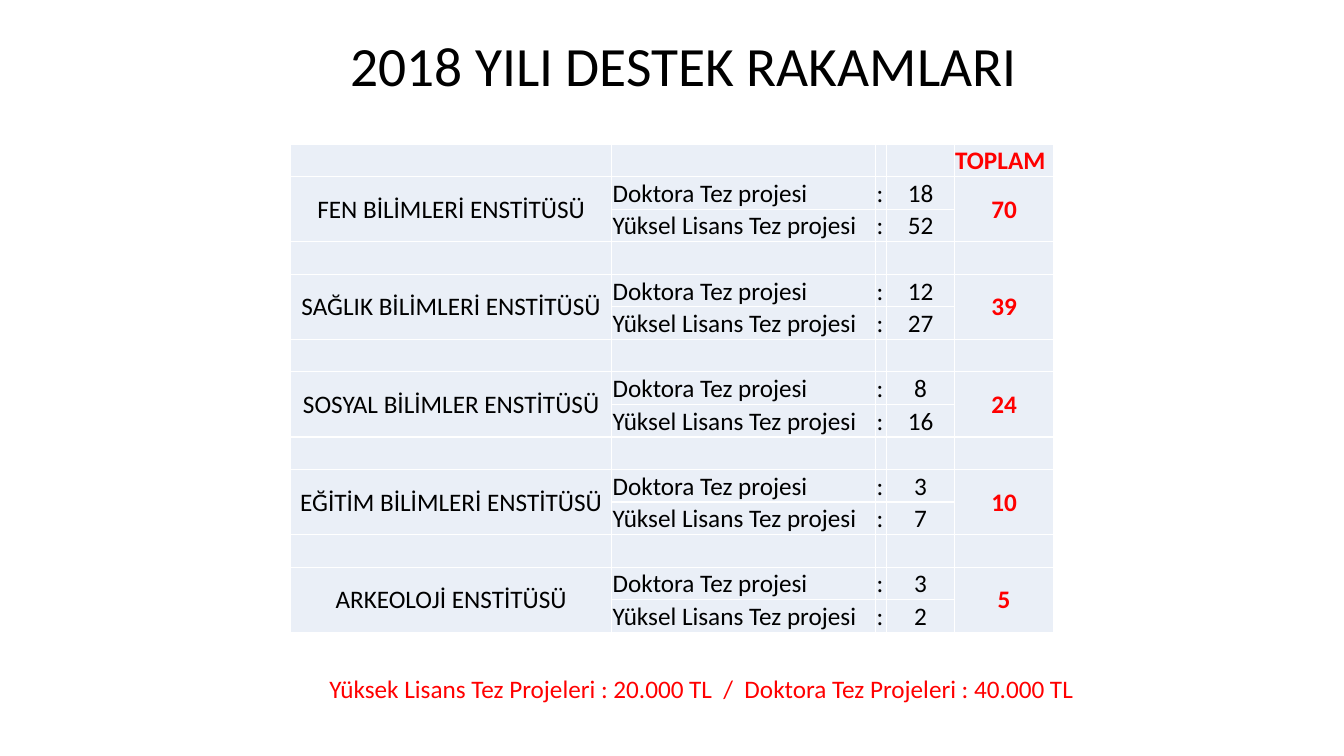
from dataclasses import dataclass

from lxml.etree import SubElement
from pptx import Presentation
from pptx.dml.color import RGBColor
from pptx.enum.text import MSO_ANCHOR as Anchor, PP_ALIGN as Align
from pptx.oxml.ns import qn
from pptx.util import Cm, Pt


@dataclass(frozen=True)
class Theme:
    font: str = "Calibri"
    ink: str = "000000"
    accent: str = "FF0000"
    cell: str = "EAEFF7"
    border: str = "FFFFFF"
    title_size: float = 39.6
    body_size: float = 18
    border_width: float = 1


INSTITUTES = [
    ("FEN BİLİMLERİ ENSTİTÜSÜ", 18, 52),
    ("SAĞLIK BİLİMLERİ ENSTİTÜSÜ", 12, 27),
    ("SOSYAL BİLİMLER ENSTİTÜSÜ", 8, 16),
    ("EĞİTİM BİLİMLERİ ENSTİTÜSÜ", 3, 7),
    ("ARKEOLOJİ ENSTİTÜSÜ", 3, 2),
]
PROJECT_TYPES = ("Doktora Tez projesi", "Yüksel Lisans Tez projesi")
COLUMN_WIDTHS = (8.1, 6.65, 0.28, 1.7, 2.51)
ROW_HEIGHT = 0.82
ROWS_PER_INSTITUTE = 3
CELL_MARGIN = 0.02


class SlideBuilder:
    def __init__(self, slide, theme):
        self.slide = slide
        self.theme = theme

    def fill_text(self, frame, text, size, color, align=Align.LEFT, bold=False):
        frame.text = text
        para = frame.paragraphs[0]
        para.alignment = align
        for span in para.runs:
            span.font.name = self.theme.font
            span.font.size = Pt(size)
            span.font.bold = bold
            span.font.color.rgb = RGBColor.from_string(color)
        return para

    def text(self, text, left, top, width, height, size, color, anchor,
             indent_left=0.25, indent_right=0.25):
        box = self.slide.shapes.add_textbox(Cm(left), Cm(top), Cm(width), Cm(height))
        frame = box.text_frame
        frame.word_wrap = True
        frame.vertical_anchor = anchor
        frame.margin_left, frame.margin_right = Cm(indent_left), Cm(indent_right)
        return self.fill_text(frame, text, size, color, Align.CENTER)

    def table(self, row_count, left, top):
        """Add an empty table with plain filled cells and thin borders."""
        frame = self.slide.shapes.add_table(
            row_count, len(COLUMN_WIDTHS), Cm(left), Cm(top),
            Cm(sum(COLUMN_WIDTHS)), Cm(row_count * ROW_HEIGHT))
        table = frame.table
        table.first_row = table.horz_banding = False
        for column, width in zip(table.columns, COLUMN_WIDTHS):
            column.width = Cm(width)
        for row in table.rows:
            row.height = Cm(ROW_HEIGHT)
            for cell in row.cells:
                self.style_cell(cell)
        return table

    def style_cell(self, cell):
        cell.margin_left = cell.margin_right = cell.margin_top = Cm(CELL_MARGIN)
        cell.margin_bottom = 0
        properties = cell._tc.get_or_add_tcPr()
        for side in ("lnL", "lnR", "lnT", "lnB"):
            line = SubElement(properties, qn(f"a:{side}"),
                              w=str(Pt(self.theme.border_width)))
            fill = SubElement(line, qn("a:solidFill"))
            SubElement(fill, qn("a:srgbClr"), val=self.theme.border)
        cell.fill.solid()
        cell.fill.fore_color.rgb = RGBColor.from_string(self.theme.cell)

    def cell(self, cell, text, align=Align.LEFT, anchor=Anchor.MIDDLE, total=False):
        color = self.theme.accent if total else self.theme.ink
        cell.vertical_anchor = anchor
        self.fill_text(cell.text_frame, text, self.theme.body_size, color, align, total)

    def institute(self, table, top_row, name, counts):
        """Fill two rows: merged name and total around one line per project type."""
        for column in (0, 4):
            table.cell(top_row, column).merge(table.cell(top_row + 1, column))
        self.cell(table.cell(top_row, 0), name, Align.CENTER)
        self.cell(table.cell(top_row, 4), str(sum(counts)), Align.CENTER, total=True)
        for row, (project, count) in enumerate(zip(PROJECT_TYPES, counts), top_row):
            self.cell(table.cell(row, 1), project, anchor=Anchor.BOTTOM)
            self.cell(table.cell(row, 2), ":", anchor=Anchor.BOTTOM)
            self.cell(table.cell(row, 3), str(count), Align.CENTER, Anchor.BOTTOM)


def main():
    deck = Presentation()
    deck.slide_width, deck.slide_height = Cm(33.87), Cm(19.05)
    theme = Theme()
    page = SlideBuilder(deck.slides.add_slide(deck.slide_layouts[6]), theme)

    title = page.text("2018 YILI DESTEK RAKAMLARI", 2.33, 1.02, 29.21, 1.4,
                      theme.title_size, theme.ink, Anchor.MIDDLE, indent_left=0.85)
    title.line_spacing = 0.9

    table = page.table(len(INSTITUTES) * ROWS_PER_INSTITUTE, 7.32, 3.63)
    page.cell(table.cell(0, 4), "TOPLAM", total=True)
    for index, (name, *counts) in enumerate(INSTITUTES):
        page.institute(table, 1 + index * ROWS_PER_INSTITUTE, name, counts)

    page.text("Yüksek Lisans Tez Projeleri : 20.000 TL  /  Doktora Tez Projeleri : 40.000 TL",
              3.3, 16.84, 28.91, 1.8, theme.body_size, theme.accent, Anchor.TOP,
              indent_right=0.4)
    deck.save("out.pptx")


if __name__ == "__main__":
    main()
